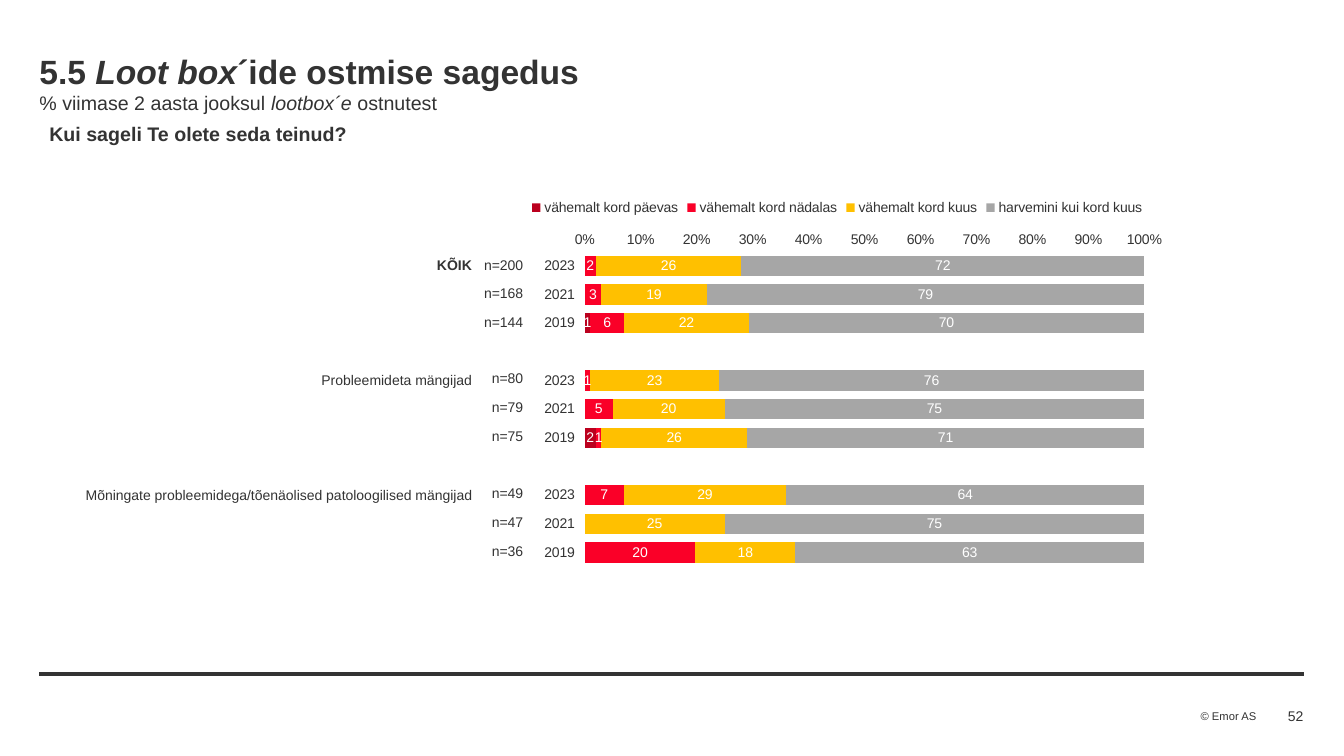
from lxml.etree import SubElement
from pptx import Presentation
from pptx.chart.data import CategoryChartData
from pptx.dml.color import RGBColor
from pptx.enum.chart import XL_AXIS_CROSSES as Crosses, XL_CHART_TYPE as ChartType
from pptx.enum.chart import XL_LEGEND_POSITION as LegendPosition, XL_TICK_MARK as TickMark
from pptx.enum.shapes import MSO_CONNECTOR as Connector
from pptx.enum.text import MSO_ANCHOR as Anchor, MSO_AUTO_SIZE as AutoSize, PP_ALIGN as Align
from pptx.oxml.ns import qn
from pptx.util import Inches, Pt

INK = RGBColor(0x33, 0x33, 0x33)
WHITE = RGBColor(0xFF, 0xFF, 0xFF)
DARK_RED = RGBColor(0xBB, 0x00, 0x1E)
RED = RGBColor(0xFA, 0x00, 0x28)
YELLOW = RGBColor(0xFF, 0xC0, 0x00)
GREY = RGBColor(0xA6, 0xA6, 0xA6)

YEARS = ["2023", "2021", "2019"]
GROUPS = [
    ("KÕIK", [200, 168, 144]),
    ("Probleemideta mängijad", [80, 79, 75]),
    ("Mõningate probleemidega/tõenäolised patoloogilised mängijad", [49, 47, 36]),
]
FREQUENCIES = [
    ("vähemalt kord päevas", DARK_RED,
     [None, None, 1, None, None, None, 2, None, None, None, None]),
    ("vähemalt kord nädalas", RED, [2, 3, 6, None, 1, 5, 1, None, 7, None, 20]),
    ("vähemalt kord kuus", YELLOW, [26, 19, 22, None, 23, 20, 26, None, 29, 25, 18]),
    ("harvemini kui kord kuus", GREY, [72, 79, 70, None, 76, 75, 71, None, 64, 75, 63]),
]
NO_MARGINS = dict(margin_left=0, margin_right=0, margin_top=0, margin_bottom=0)
LABEL_MARGINS = dict(margin_left=Inches(0.01), margin_right=Inches(0.01),
                     margin_top=Inches(0.01), margin_bottom=0)


def apply(target, **values):
    for name, value in values.items():
        setattr(target, name, value)


class SlideBuilder:
    font_name = "Arial"

    def __init__(self, deck):
        self.deck = deck
        self.slide = deck.slides.add_slide(deck.slide_layouts[5])

    def x(self, percent):
        return round(self.deck.slide_width * percent / 100)

    def y(self, percent):
        return round(self.deck.slide_height * percent / 100)

    def box(self, left, top, width, height):
        return self.x(left), self.y(top), self.x(width), self.y(height)

    def style(self, font, size, color=INK, **values):
        apply(font, name=self.font_name, size=Pt(size), **values)
        font.color.rgb = color

    def add_words(self, paragraph, text, size, **values):
        run = paragraph.add_run()
        run.text = text
        self.style(run.font, size, **values)

    def title(self, place, lines):
        heading = self.slide.shapes.title
        apply(heading, **dict(zip(("left", "top", "width", "height"), self.box(*place))))
        frame = heading.text_frame
        apply(frame, word_wrap=True, auto_size=AutoSize.NONE, vertical_anchor=Anchor.TOP,
              **{**NO_MARGINS, "margin_top": Inches(0.03)})
        paragraph = frame.paragraphs[0]
        paragraph.alignment = Align.LEFT
        for number, (size, bold, pieces) in enumerate(lines):
            if number:
                paragraph.add_line_break()
            for text, italic in pieces:
                self.add_words(paragraph, text, size, bold=bold, italic=italic)

    def text(self, place, text, size, bold=False, align=Align.LEFT, **frame_values):
        frame = self.slide.shapes.add_textbox(*self.box(*place)).text_frame
        apply(frame, **{"word_wrap": True, **frame_values})
        frame.paragraphs[0].alignment = align
        self.add_words(frame.paragraphs[0], text, size, bold=bold)

    def rule(self, left, right, top, weight):
        line = self.slide.shapes.add_connector(
            Connector.STRAIGHT, self.x(left), self.y(top), self.x(right), self.y(top))
        line.line.color.rgb = INK
        line.line.width = Pt(weight)
        SubElement(line._element.spPr, qn("a:effectLst"))

    def table(self, place, widths, rows):
        table = self.slide.shapes.add_table(
            len(rows), len(widths), *self.box(*place)).table
        apply(table, first_row=False, horz_banding=False)
        for column, width in zip(table.columns, widths):
            column.width = self.x(width)
        for row, contents in zip(table.rows, rows):
            row.height = self.y(place[3] / len(rows))
            for cell, (text, bold, values) in zip(row.cells, contents):
                cell.fill.background()
                apply(cell, **values)
                paragraph = cell.text_frame.paragraphs[0]
                paragraph.alignment = Align.RIGHT
                if text:
                    self.add_words(paragraph, text, 10, bold=bold)
                else:
                    SubElement(paragraph._p, qn("a:endParaRPr")).set("sz", "1000")

    def stacked_bars(self, place, categories, series, plot_area):
        data = CategoryChartData()
        data.categories = categories
        for name, _, values in series:
            data.add_series(name, values)
        chart = self.slide.shapes.add_chart(
            ChartType.BAR_STACKED_100, *self.box(*place), data).chart
        self.style(chart.font, 10)
        apply(chart, has_title=False, has_legend=True)
        apply(chart.legend, position=LegendPosition.TOP, include_in_layout=False)
        apply(chart.plots[0], gap_width=40, overlap=100, vary_by_categories=False)
        apply(chart.category_axis, reverse_order=True, crosses=Crosses.MAXIMUM,
              major_tick_mark=TickMark.OUTSIDE, has_major_gridlines=False)
        apply(chart.value_axis, minimum_scale=0, maximum_scale=1, major_unit=0.1,
              major_tick_mark=TickMark.NONE, has_major_gridlines=False)
        apply(chart.value_axis.tick_labels, number_format="0%",
              number_format_is_linked=False)
        for axis in (chart.category_axis, chart.value_axis):
            axis.format.line.fill.background()
        for bars, (_, color, _) in zip(chart.plots[0].series, series):
            bars.format.fill.solid()
            bars.format.fill.fore_color.rgb = color
            bars.data_labels.show_value = True
            self.style(bars.data_labels.font, 10, WHITE)
        self.place_plot(chart, plot_area)

    def place_plot(self, chart, plot_area):
        area = chart._chartSpace.chart.plotArea
        for old in area.findall(qn("c:layout")):
            area.remove(old)
        layout = SubElement(area, qn("c:layout"))
        area.insert(0, layout)
        manual = SubElement(layout, qn("c:manualLayout"))
        settings = [("layoutTarget", "inner"), ("xMode", "edge"), ("yMode", "edge")]
        for tag, value in settings + list(zip("xywh", plot_area)):
            SubElement(manual, qn(f"c:{tag}")).set("val", str(value))


def sample_rows():
    empty = ("", False, {})
    rows = []
    for group_number, (group, sizes) in enumerate(GROUPS):
        if group_number:
            rows.append([empty] * 3)
        anchor = Anchor.TOP if group_number else Anchor.MIDDLE
        for year_number, size in enumerate(sizes):
            label = empty if year_number else (
                group, group_number == 0,
                dict(vertical_anchor=Anchor.MIDDLE, **LABEL_MARGINS))
            rows.append([label, (f"n={size}", False, dict(vertical_anchor=anchor)), empty])
    return rows


def main():
    deck = Presentation()
    apply(deck, slide_width=Inches(13.33), slide_height=Inches(7.5))
    page = SlideBuilder(deck)
    page.rule(2.93, 97.05, 89.2, 3)
    page.text((89.33, 93.87, 4.2, 1.73), "© Emor AS", 8, word_wrap=False, **NO_MARGINS)
    page.table((1.8, 33.2, 83.48, 41.87), [33.38, 4.5, 45.6], sample_rows())
    page.title((2.93, 6.27, 94.05, 5.87), [
        (24, True, [("5.5", False), (" Loot box", True), ("´ide ostmise sagedus", False)]),
        (14, False, [("% viimase 2 aasta jooksul ", False), ("lootbox´e ", True),
                     ("ostnutest", False)]),
    ])
    years = (YEARS + [""]) * 2 + YEARS
    page.stacked_bars((36.9, 24.93, 50.78, 59.6), years, FREQUENCIES,
                      (0.13, 0.14, 0.82, 0.7))
    page.text((2.93, 15.47, 50.03, 7.6), "Kui sageli Te olete seda teinud?", 14, bold=True)
    page.text((89.03, 93.2, 7.95, 2.93), "52", 10, align=Align.RIGHT,
              vertical_anchor=Anchor.MIDDLE, **NO_MARGINS)
    deck.save("out.pptx")


if __name__ == "__main__":
    main()
